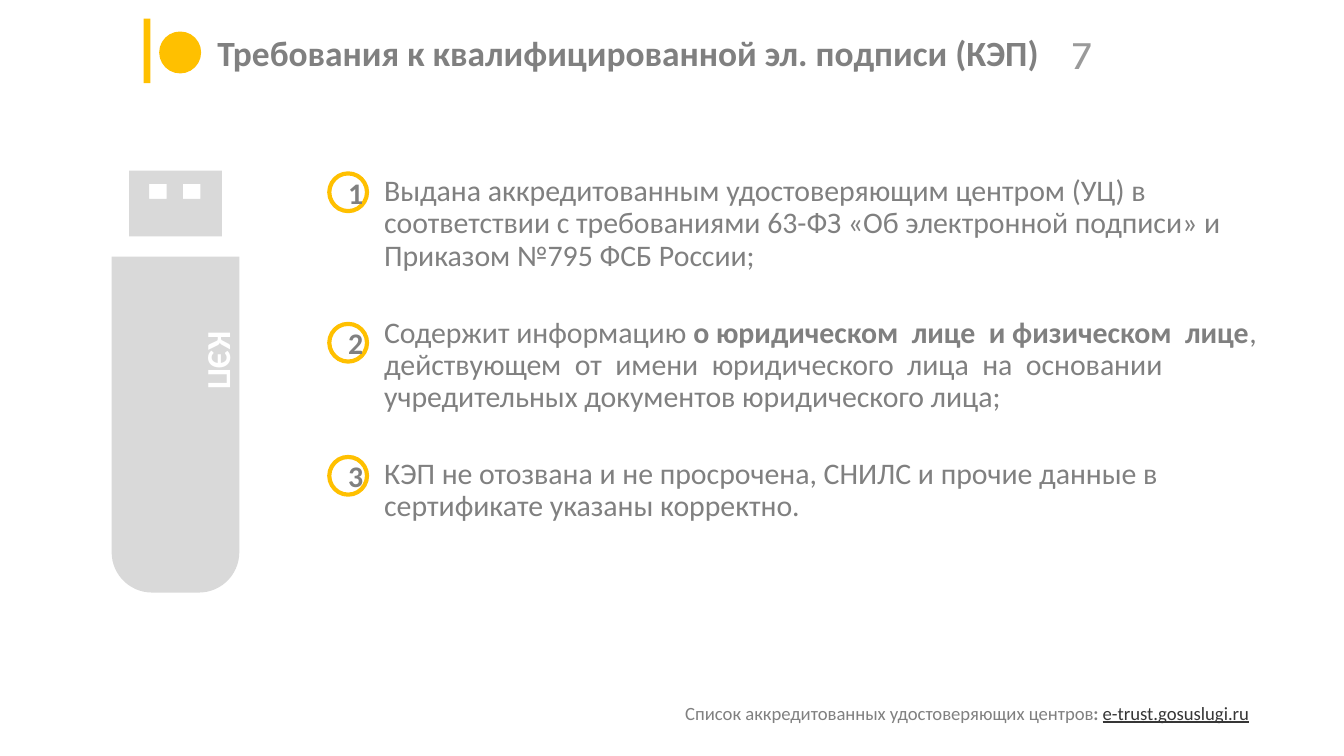
from math import cos, radians, sin

from pptx import Presentation
from pptx.dml.color import RGBColor
from pptx.enum.shapes import MSO_SHAPE as Shape
from pptx.enum.text import MSO_ANCHOR as Anchor, PP_ALIGN as Align
from pptx.util import Pt

COLORS = {
    "accent": "FFC000",
    "text": "808080",
    "number": "9A9A9A",
    "link": "363636",
    "drive": "D9D9D9",
    "white": "FFFFFF",
}

REQUIREMENTS = [
    [("Выдана аккредитованным удостоверяющим центром (УЦ) в соответствии "
      "с требованиями 63-ФЗ «Об электронной подписи» и Приказом №795 ФСБ России;", {})],
    [("Содержит информацию ", {}),
     ("о юридическом  лице  и физическом  лице", {"bold": True}),
     (",  действующем  от  имени  юридического  лица  на  основании "
      "учредительных документов юридического лица;", {})],
    [("КЭП не отозвана и не просрочена, СНИЛС и прочие данные "
      "в сертификате указаны корректно.", {})],
]
BADGE_TOPS = [92.9, 173.5, 244.8]


def rgb(name):
    return RGBColor.from_string(COLORS[name])


def set_all(target, values):
    for name, value in values.items():
        setattr(target, name, value)


def write(frame, paragraphs, size, color="text", font="Calibri", layout=None, **style):
    """Fill a text frame; each paragraph is a list of (text, overrides) runs."""
    for index, runs in enumerate(paragraphs):
        paragraph = frame.paragraphs[0] if index == 0 else frame.add_paragraph()
        set_all(paragraph, layout or {})
        for text, overrides in runs:
            run = paragraph.add_run()
            run.text = text
            values = {"name": font, "size": Pt(size), "color": color, **style, **overrides}
            run.font.color.rgb = rgb(values.pop("color"))
            set_all(run.font, values)


def add_text(shapes, box, paragraphs, size, frame_values=None, **style):
    label = shapes.add_textbox(*map(Pt, box))
    set_all(label.text_frame, {"word_wrap": True, **(frame_values or {})})
    write(label.text_frame, paragraphs, size, **style)
    return label


def paint(shape, fill, line=None):
    shape.shadow.inherit = False
    shape.fill.solid()
    shape.fill.fore_color.rgb = rgb(fill)
    if line:
        shape.line.color.rgb = rgb(line)
        shape.line.width = Pt(2.25)
    else:
        shape.line.fill.background()


def add_solid(shapes, kind, box, fill, line=None):
    shape = shapes.add_shape(kind, *map(Pt, box))
    paint(shape, fill, line)
    return shape


def add_badge(shapes, number, top):
    badge = add_solid(shapes, Shape.OVAL, (176.4, top, 20.2, 20.2), "white", "accent")
    badge.text_frame.vertical_anchor = Anchor.MIDDLE
    write(badge.text_frame, [[(str(number), {})]], 16, bold=True,
          layout={"alignment": Align.CENTER})


def rectangle(left, top, right, bottom):
    return [(left, top), (right, top), (right, bottom), (left, bottom)]


def round_bottom(left, top, right, bottom, radius):
    """Outline of a box whose two lower corners are rounded."""
    def corner(center_x, start):
        return [(center_x + radius * cos(radians(a)),
                 bottom - radius + radius * sin(radians(a)))
                for a in range(start, start + 91, 6)]
    return ([(left, top), (right, top)]
            + corner(right - radius, 0) + corner(left + radius, 90))


def add_drive(shapes):
    """USB drive: contacts cut out of the plug, and a rounded body."""
    contacts = [rectangle(x, 98.6, x + 9.4, 106.6)[::-1] for x in (79.9, 97.9)]
    plug = rectangle(69.1, 91.4, 118.8, 126.7)
    body = round_bottom(59.8, 137.5, 128.2, 317.5, 21.6)
    outlines = [[(Pt(x), Pt(y)) for x, y in part] for part in (plug, *contacts, body)]

    drive = shapes.add_group_shape().shapes
    builder = drive.build_freeform(*outlines[0][0])
    for index, outline in enumerate(outlines):
        if index:
            builder.move_to(*outline[0])
        builder.add_line_segments(outline[1:], close=True)
    paint(builder.convert_to_shape(), "drive")

    label = add_text(drive, (58.3, 187.2, 91.4, 58.3), [[("КЭП", {})]], 18,
                     color="white", bold=True)
    label.rotation = 90


def main():
    deck = Presentation()
    deck.slide_width, deck.slide_height = Pt(720), Pt(405)
    shapes = deck.slides.add_slide(deck.slide_layouts[6]).shapes

    # Header
    add_solid(shapes, Shape.RECTANGLE, (77, 10, 3.6, 34.6), "accent")
    add_text(shapes, (547.2, 12.2, 42.5, 31.7), [[("7", {})]], 22,
             {"margin_left": Pt(5), "margin_right": Pt(5),
              "margin_top": Pt(3), "margin_bottom": Pt(3)},
             color="number", font="Karla", layout={"alignment": Align.RIGHT})
    add_text(shapes, (87.8, 7.2, 516.2, 42.5),
             [[("Требования к квалифицированной эл. подписи (КЭП)", {})]], 19,
             {"vertical_anchor": Anchor.MIDDLE, "margin_left": Pt(28.7),
              "margin_top": Pt(7.2)},
             bold=True, layout={"line_spacing": 0.8})
    add_solid(shapes, Shape.OVAL, (86.4, 18, 20.2, 20.2), "accent", "accent")

    # Numbered requirements
    add_text(shapes, (198.7, 90.7, 493.2, 195.1), REQUIREMENTS, 16,
             layout={"line_spacing": 0.9, "space_after": Pt(24)})
    for number, top in enumerate(BADGE_TOPS, start=1):
        add_badge(shapes, number, top)

    # Signature drive
    add_drive(shapes)

    # Footnote
    add_text(shapes, (360, 373.7, 331.9, 18),
             [[("Список аккредитованных удостоверяющих центров", {}),
               (": ", {"bold": True}),
               ("e-trust.gosuslugi.ru", {"color": "link", "underline": True})]],
             10, layout={"line_spacing": 0.9})

    deck.save("out.pptx")


if __name__ == "__main__":
    main()
